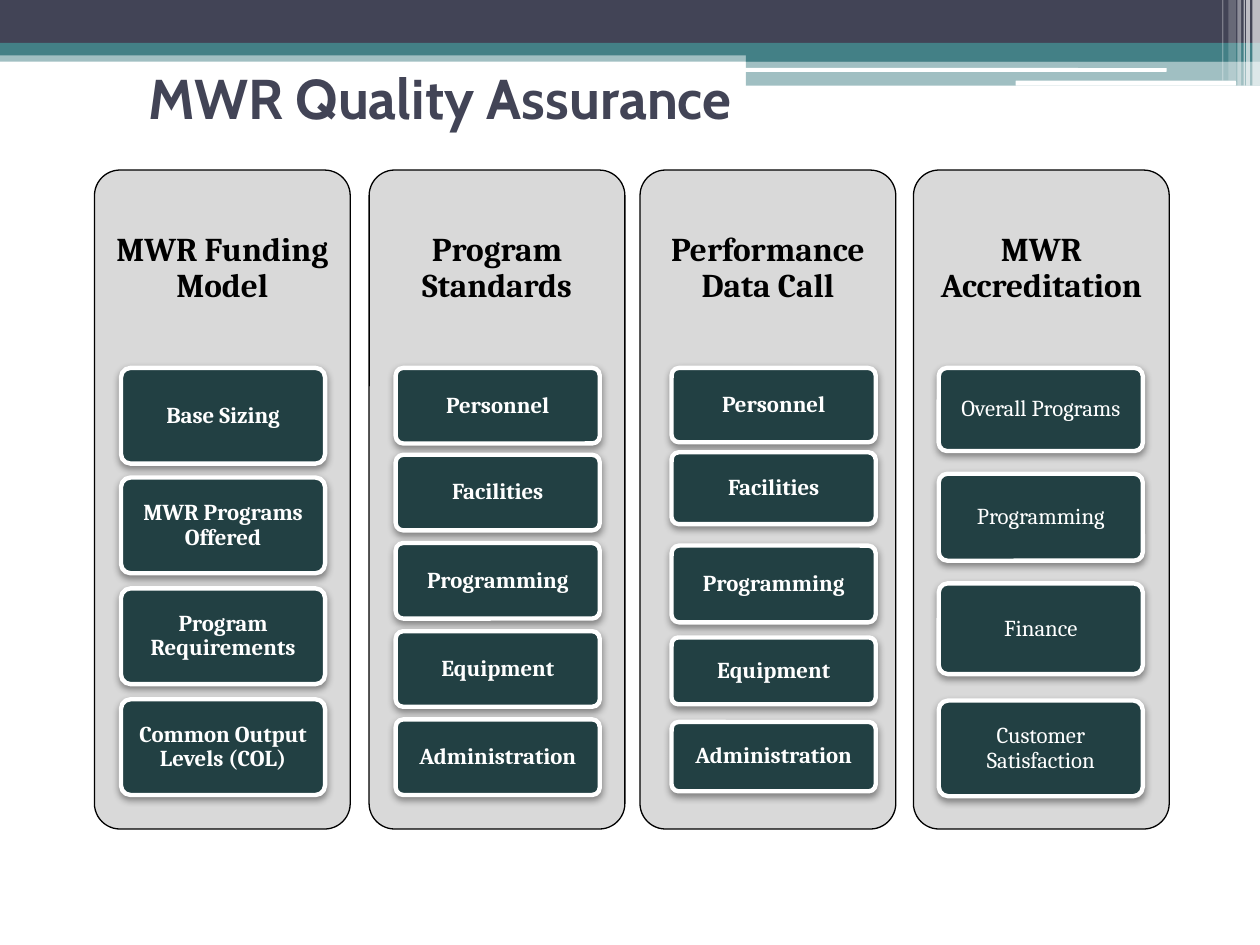
import lxml.etree
import pptx
import pptx.dml.color
import pptx.enum.shapes
import pptx.enum.text
import pptx.oxml
import pptx.oxml.ns
import pptx.util
from pptx.util import Inches

RGBColor = pptx.dml.color.RGBColor
NAVY = RGBColor(0x42, 0x44, 0x56)
TEAL = RGBColor(0x43, 0x80, 0x86)
DARK_TEAL = RGBColor(0x22, 0x40, 0x43)
GRAY = RGBColor(0xD9, 0xD9, 0xD9)
WHITE = RGBColor(0xFF, 0xFF, 0xFF)
BLACK = RGBColor(0x00, 0x00, 0x00)

RECT = pptx.enum.shapes.MSO_SHAPE.RECTANGLE
ROUND = pptx.enum.shapes.MSO_SHAPE.ROUNDED_RECTANGLE
CENTER = pptx.enum.text.PP_ALIGN.CENTER
LEFT = pptx.enum.text.PP_ALIGN.LEFT

SHADOW = (
    '<a:outerShdw %s blurRad="52070" dist="25400" dir="5400000" rotWithShape="0">'
    '<a:srgbClr val="000000"><a:alpha val="40000"/></a:srgbClr></a:outerShdw>'
    % pptx.oxml.ns.nsdecls("a")
)

deck = pptx.Presentation()
deck.slide_width = Inches(10)
deck.slide_height = Inches(7.5)
page = deck.slides.add_slide(deck.slide_layouts[6])


def add_box(kind, left, top, width, height, fill, line=None, line_width=0):
    box = page.shapes.add_shape(
        kind, Inches(left), Inches(top), Inches(width), Inches(height)
    )
    box.shadow.inherit = False
    box.fill.solid()
    box.fill.fore_color.rgb = fill
    if line is None:
        box.line.fill.background()
    else:
        box.line.color.rgb = line
        box.line.width = pptx.util.Pt(line_width)
    return box


def write(box, text, font, size, color, bold, align, spacing, inset_x, inset_y):
    frame = box.text_frame
    frame.word_wrap = True
    frame.vertical_anchor = pptx.enum.text.MSO_ANCHOR.MIDDLE
    frame.margin_left = frame.margin_right = Inches(inset_x)
    frame.margin_top = frame.margin_bottom = Inches(inset_y)
    para = frame.paragraphs[0]
    para.alignment = align
    para.line_spacing = spacing
    span = para.add_run()
    span.text = text
    span.font.name = font
    span.font.size = pptx.util.Pt(size)
    span.font.bold = bold
    span.font.color.rgb = color


banner = [
    (RECT, 0, 0.4, 10, 0.09, TEAL, 50),
    (RECT, 0, 0, 10, 0.34, NAVY, 100),
    (RECT, 0, 0.34, 10, 0.1, TEAL, 100),
    (RECT, 5.92, 0.39, 4.08, 0.1, TEAL, 100),
    (RECT, 5.92, 0.48, 4.08, 0.2, TEAL, 50),
    (ROUND, 5.91, 0.54, 3.35, 0.03, WHITE, 100),
    (ROUND, 8.06, 0.64, 1.75, 0.04, WHITE, 100),
    (RECT, 9.94, 0, 0.06, 0.68, WHITE, 65),
    (RECT, 9.89, 0, 0.03, 0.68, WHITE, 65),
    (RECT, 9.87, 0, 0.01, 0.68, WHITE, 60),
    (RECT, 9.82, 0, 0.03, 0.68, WHITE, 40),
    (RECT, 9.75, 0, 0.06, 0.64, WHITE, 20),
    (RECT, 9.7, 0, 0.01, 0.64, WHITE, 30),
]
for kind, left, top, width, height, color, opacity in banner:
    strip = add_box(kind, left, top, width, height, color)
    if opacity < 100:
        tint = strip.fill._xPr.find(".//" + pptx.oxml.ns.qn("a:srgbClr"))
        alpha = lxml.etree.SubElement(tint, pptx.oxml.ns.qn("a:alpha"))
        alpha.set("val", str(opacity * 1000))

title = page.shapes.add_textbox(Inches(1.08), Inches(0.5), Inches(8.08), Inches(0.54))
write(title, "MWR Quality Assurance", "Cabin", 32, NAVY, True, LEFT, 1, 0.1, 0.05)

columns = [
    (0.75, "MWR Funding Model", 0.96, True, [
        ("Base Sizing", 2.92, 0.76),
        ("MWR Programs Offered", 3.79, 0.76),
        ("Program Requirements", 4.67, 0.76),
        ("Common Output Levels (COL)", 5.55, 0.76),
    ]),
    (2.93, "Program Standards", 3.14, True, [
        ("Personnel", 2.92, 0.6),
        ("Facilities", 3.61, 0.6),
        ("Programming", 4.31, 0.6),
        ("Equipment", 5.01, 0.6),
        ("Administration", 5.71, 0.6),
    ]),
    (5.08, "Performance Data Call", 5.33, True, [
        ("Personnel", 2.92, 0.59),
        ("Facilities", 3.59, 0.57),
        ("Programming", 4.33, 0.61),
        ("Equipment", 5.06, 0.53),
        ("Administration", 5.73, 0.55),
    ]),
    (7.25, "MWR Accreditation", 7.45, False, [
        ("Overall Programs", 2.92, 0.66),
        ("Programming", 3.76, 0.69),
        ("Finance", 4.63, 0.72),
        ("Customer Satisfaction", 5.56, 0.76),
    ]),
]
for left, heading, card_left, bold, cards in columns:
    panel = add_box(ROUND, left, 1.35, 2.03, 5.23, GRAY, BLACK, 0.75)
    panel.adjustments[0] = 0.1
    header = page.shapes.add_textbox(
        Inches(left), Inches(1.35), Inches(2.03), Inches(1.57)
    )
    write(header, heading, "Cambria", 19, BLACK, True, CENTER, 0.9, 0.08, 0.08)
    for label, top, height in cards:
        card = add_box(ROUND, card_left, top, 1.62, height, DARK_TEAL, WHITE, 2.5)
        card.adjustments[0] = 0.1
        effects = card._element.spPr.find(pptx.oxml.ns.qn("a:effectLst"))
        effects.append(pptx.oxml.parse_xml(SHADOW))
        write(card, label, "Cambria", 13, WHITE, bold, CENTER, 0.9, 0.04, 0.03)

deck.save("out.pptx")
